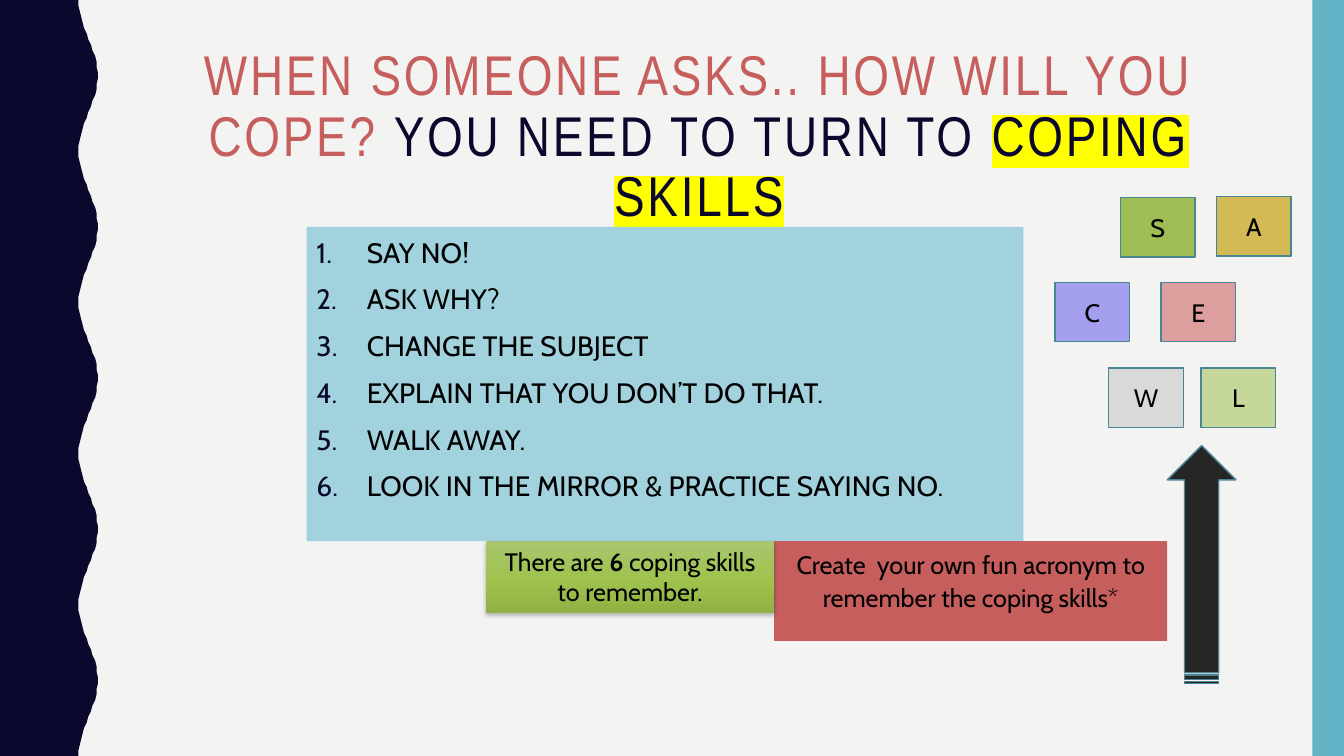
"""Build the slide about six coping skills."""
import math

import pptx
import pptx.dml.color
import pptx.enum.shapes
import pptx.enum.text
import pptx.oxml
import pptx.oxml.ns
import pptx.util

Pt = pptx.util.Pt
SHAPE = pptx.enum.shapes.MSO_SHAPE
ANCHOR = pptx.enum.text.MSO_ANCHOR
CENTER = pptx.enum.text.PP_ALIGN.CENTER
NS = pptx.oxml.ns.nsdecls("a")
WIDTH, HEIGHT = 960, 540

COLORS = {
    "paper": "F3F3F2", "navy": "0B082E", "teal": "62B4C6", "red": "C65E5E",
    "sky": "A1D2DD", "outline": "498592", "black": "000000", "charcoal": "262626",
    "yellow": "FFFF00", "green": "9EBE55", "gold": "D3BA55", "violet": "A49EEE",
    "pink": "DD9E9E", "gray": "D9D9D9", "lime": "C5D899",
    "leaf_top": "A9C66E", "leaf_middle": "A0C350", "leaf_bottom": "90B242",
}


class Deck:
    """Holds the slide and its style, and draws each kind of element."""

    def __init__(self):
        self.presentation = pptx.Presentation()
        self.presentation.slide_width = Pt(WIDTH)
        self.presentation.slide_height = Pt(HEIGHT)
        self.slide = self.presentation.slides.add_slide(self.presentation.slide_layouts[5])
        self.paint(self.slide.background.fill, "paper")
        self.body_font = "Cabin"
        self.title_font = "Arial Narrow"

    def paint(self, fill, color):
        fill.solid()
        fill.fore_color.rgb = pptx.dml.color.RGBColor.from_string(COLORS[color])

    def finish(self, shape, fill, line=None):
        shape.shadow.inherit = False
        self.paint(shape.fill, fill)
        if line:
            self.paint(shape.line.fill, line)
            shape.line.width = Pt(1)
        else:
            shape.line.fill.background()
        return shape

    def block(self, box, fill, line=None, kind=SHAPE.RECTANGLE):
        shape = self.slide.shapes.add_shape(kind, *map(Pt, box))
        return self.finish(shape, fill, line)

    def outline(self, points, fill):
        builder = self.slide.shapes.build_freeform(*points[0], scale=Pt(1))
        builder.add_line_segments(points[1:], close=True)
        return self.finish(builder.convert_to_shape(), fill)

    def add_text(self, paragraph, text, size, color="black", font=None, bold=False):
        run = paragraph.add_run()
        run.text = text
        run.font.size = Pt(size)
        run.font.name = font or self.body_font
        run.font.bold = bold
        self.paint(run.font.fill, color)
        return run

    def label(self, shape, runs, size=18, anchor=ANCHOR.TOP):
        frame = shape.text_frame
        frame.word_wrap = True
        frame.vertical_anchor = anchor
        paragraph = frame.paragraphs[0]
        paragraph.alignment = CENTER
        for text, bold in runs:
            self.add_text(paragraph, text, size, bold=bold)
        return paragraph

    def title(self, box, parts):
        heading = self.slide.shapes.title
        heading.left, heading.top, heading.width, heading.height = map(Pt, box)
        frame = heading.text_frame
        frame.word_wrap = True
        frame.auto_size = pptx.enum.text.MSO_AUTO_SIZE.NONE
        frame.vertical_anchor = ANCHOR.TOP
        paragraph = frame.paragraphs[0]
        paragraph.alignment = CENTER
        paragraph.line_spacing = 0.9
        for text, color, highlight in parts:
            run = self.add_text(paragraph, text, 40, color, self.title_font)
            properties = run._r.get_or_add_rPr()
            properties.set("spc", "200")
            if highlight:
                properties.find(pptx.oxml.ns.qn("a:solidFill")).addnext(pptx.oxml.parse_xml(
                    f'<a:highlight {NS}><a:srgbClr val="{COLORS[highlight]}"/></a:highlight>'))

    def numbered_list(self, box, fill, items):
        frame = self.block(box, fill).text_frame
        frame.word_wrap = True
        frame.vertical_anchor = ANCHOR.TOP
        for index, item in enumerate(items):
            paragraph = frame.add_paragraph() if index else frame.paragraphs[0]
            paragraph.alignment = pptx.enum.text.PP_ALIGN.LEFT
            paragraph.line_spacing = 1.1
            paragraph.space_before = Pt(7)
            properties = paragraph._p.get_or_add_pPr()
            properties.set("marL", str(int(Pt(36))))
            properties.set("indent", str(int(Pt(-36))))
            properties.append(pptx.oxml.parse_xml(
                f'<a:buClr {NS}><a:srgbClr val="{COLORS["navy"]}"/></a:buClr>'))
            properties.append(pptx.oxml.parse_xml(f'<a:buAutoNum {NS} type="arabicPeriod"/>'))
            self.add_text(paragraph, item, 20)

    def gradient(self, shape, stops):
        shape.fill.gradient()
        shape.fill.gradient_angle = 270
        stop_list = shape._element.spPr.find(".//" + pptx.oxml.ns.qn("a:gsLst"))
        for stop in list(stop_list):
            stop_list.remove(stop)
        for percent, color in stops:
            stop_list.append(pptx.oxml.parse_xml(
                f'<a:gs {NS} pos="{percent * 1000}"><a:srgbClr val="{COLORS[color]}"/></a:gs>'))

    def drop_shadow(self, shape):
        blur, distance = int(Pt(3)), int(Pt(2))
        shape._element.spPr.find(pptx.oxml.ns.qn("a:effectLst")).append(pptx.oxml.parse_xml(
            f'<a:outerShdw {NS} blurRad="{blur}" dist="{distance}" dir="5400000" rotWithShape="0">'
            f'<a:srgbClr val="{COLORS["black"]}"><a:alpha val="25000"/></a:srgbClr></a:outerShdw>'))


def main():
    deck = Deck()
    wave = [(63 - 6.84 * math.cos(2 * math.pi * y / 108), y) for y in range(0, HEIGHT + 1, 4)]
    deck.outline([(0, 0), *wave, (0, HEIGHT)], "navy")
    deck.block((937.5, 0, 22.5, HEIGHT), "teal")
    deck.title((98.6, 30.2, 801.4, 117.4), [
        ("WHEN SOMEONE ASKS.. HOW WILL YOU COPE? ", "red", None),
        ("YOU NEED TO TURN TO ", "navy", None),
        ("COPING SKILLS", "navy", "yellow"),
    ])
    deck.numbered_list((219, 162, 512, 224.5), "sky", [
        "SAY NO!",
        "ASK WHY?",
        "CHANGE THE SUBJECT",
        "EXPLAIN THAT YOU DON’T DO THAT.",
        "WALK AWAY.",
        "LOOK IN THE MIRROR & PRACTICE SAYING NO.",
    ])

    acronym = deck.block((553, 386.6, 280.8, 71.3), "red")
    prompt = deck.label(acronym, [
        ("Create  your own fun acronym to remember the coping skills*", False)])
    prompt.line_spacing = 1.1
    prompt.space_before = Pt(7)

    for letter, left, top, color in [
        ("S", 800.4, 141.1, "green"), ("E", 829.4, 201.6, "pink"),
        ("C", 753.6, 201.6, "violet"), ("A", 869, 140.4, "gold"),
        ("W", 792, 262.8, "gray"), ("L", 858, 262.8, "lime"),
    ]:
        tile = deck.block((left, top, 53.3, 42.5), color, "outline")
        deck.label(tile, [(letter, False)], anchor=ANCHOR.MIDDLE)

    arrow = deck.block((773.3, 378.7, 170, 49), "charcoal", "outline", SHAPE.STRIPED_RIGHT_ARROW)
    arrow.rotation = 270

    reminder = deck.block((347, 386.6, 206, 51), "green")
    deck.gradient(reminder, [(0, "leaf_top"), (50, "leaf_middle"), (100, "leaf_bottom")])
    deck.drop_shadow(reminder)
    deck.label(reminder, [("There are ", False), ("6", True), (" coping skills to remember.", False)])

    deck.presentation.save("out.pptx")


if __name__ == "__main__":
    main()
